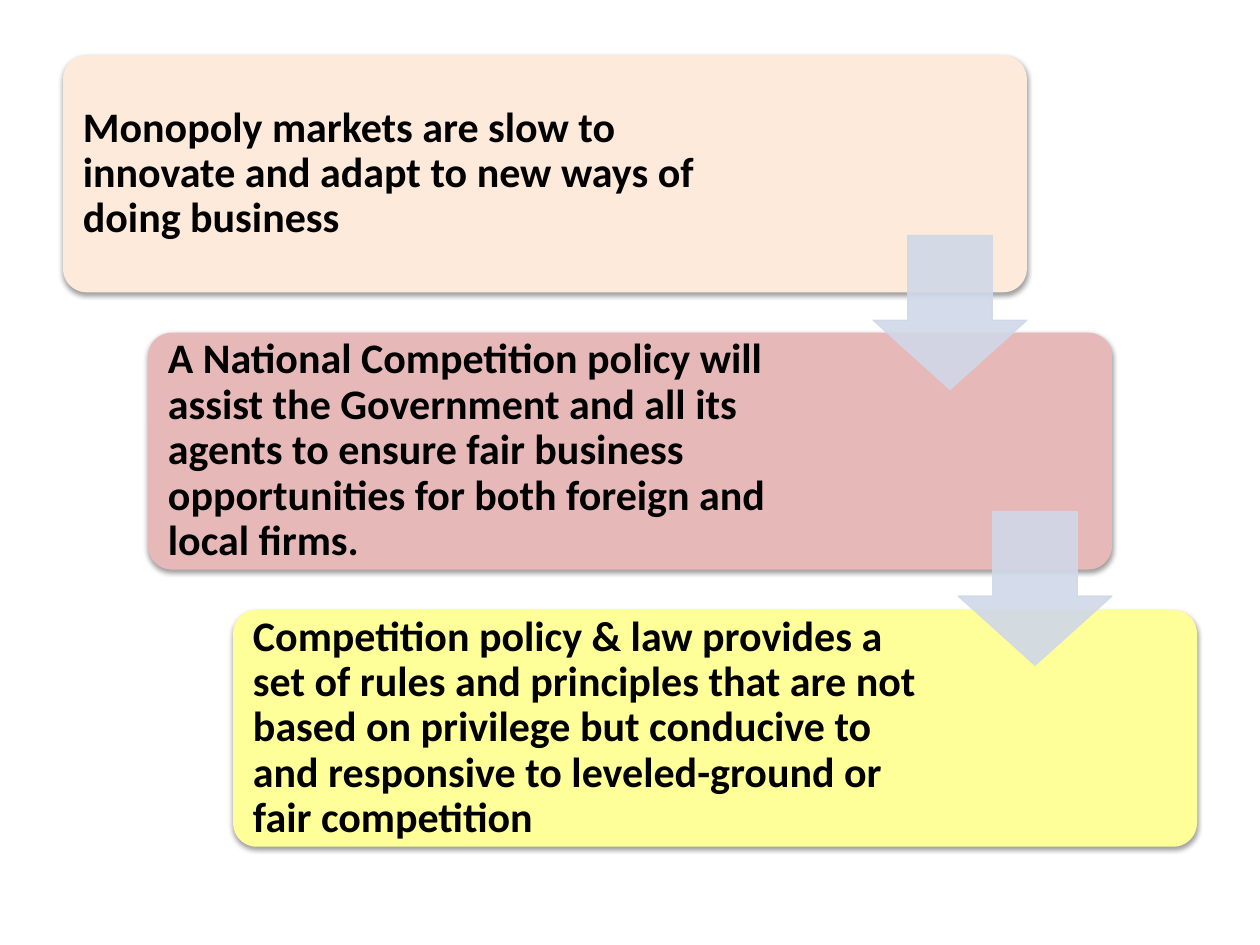
from lxml.etree import SubElement
from pptx import Presentation
from pptx.dml.color import RGBColor
from pptx.enum.shapes import MSO_SHAPE
from pptx.enum.text import MSO_ANCHOR
from pptx.oxml import parse_xml
from pptx.oxml.ns import nsdecls, qn
from pptx.util import Inches, Pt

COLORS = {
    "peach": "FDEADA",
    "rose": "E6B9B8",
    "yellow": "FFFF99",
    "arrow": "D0D8E8",
    "text": "000000",
}
STEPS = [
    ("peach", "Monopoly markets are slow to innovate and adapt to new ways of doing business"),
    ("rose", "A National Competition policy will assist the Government and all its agents "
             "to ensure fair business opportunities for both foreign and local firms."),
    ("yellow", "Competition policy & law provides a set of rules and principles that are not "
               "based on privilege but conducive to and responsive to leveled-ground or "
               "fair competition"),
]
LEFT, TOP = 0.5, 0.44
STEP_X, STEP_Y = 0.675, 2.2
CARD_WIDTH, CARD_HEIGHT = 7.65, 1.88
TEXT_INSET = 0.06
ARROW_SIZE = 1.22
SHADOW = (
    f'<a:effectLst {nsdecls("a")}>'
    '<a:outerShdw blurRad="40000" dist="20000" dir="5400000" rotWithShape="0">'
    '<a:srgbClr val="000000"><a:alpha val="38000"/></a:srgbClr>'
    '</a:outerShdw></a:effectLst>'
)


def add_filled_shape(kind, left, top, width, height, color):
    shape = slide.shapes.add_shape(
        kind, Inches(left), Inches(top), Inches(width), Inches(height))
    shape.shadow.inherit = False
    shape.fill.solid()
    shape.fill.fore_color.rgb = RGBColor.from_string(COLORS[color])
    return shape


presentation = Presentation()
presentation.slide_width = Inches(10)
presentation.slide_height = Inches(7.5)
slide = presentation.slides.add_slide(presentation.slide_layouts[6])

for index, (color, wording) in enumerate(STEPS):
    left, top = LEFT + index * STEP_X, TOP + index * STEP_Y
    card = add_filled_shape(
        MSO_SHAPE.ROUNDED_RECTANGLE, left, top, CARD_WIDTH, CARD_HEIGHT, color)
    card.adjustments[0] = 0.1
    card.line.fill.background()
    properties = card._element.spPr
    properties.replace(properties.find(qn("a:effectLst")), parse_xml(SHADOW))

    text_box = slide.shapes.add_textbox(
        Inches(left + TEXT_INSET), Inches(top + TEXT_INSET),
        Inches(5.64), Inches(CARD_HEIGHT - 2 * TEXT_INSET))
    frame = text_box.text_frame
    frame.word_wrap = True
    frame.vertical_anchor = MSO_ANCHOR.MIDDLE
    frame.margin_left = frame.margin_right = Inches(0.1)
    frame.margin_top = frame.margin_bottom = Inches(0.1)
    paragraph = frame.paragraphs[0]
    paragraph.line_spacing = 0.9
    run = paragraph.add_run()
    run.text = wording
    run.font.name = "Calibri"
    run.font.size = Pt(24)
    run.font.bold = True
    run.font.color.rgb = RGBColor.from_string(COLORS["text"])

for index in range(len(STEPS) - 1):
    arrow = add_filled_shape(
        MSO_SHAPE.DOWN_ARROW,
        LEFT + CARD_WIDTH - ARROW_SIZE + index * STEP_X, 1.87 + index * 2.19,
        ARROW_SIZE, ARROW_SIZE, "arrow")
    arrow.adjustments[0] = 0.55
    arrow.adjustments[1] = 0.45
    arrow.line.color.rgb = RGBColor.from_string(COLORS["arrow"])
    arrow.line.width = Pt(0.75)
    for color_element in arrow._element.spPr.iter(qn("a:srgbClr")):
        SubElement(color_element, qn("a:alpha")).set("val", "90000")

presentation.save("out.pptx")
